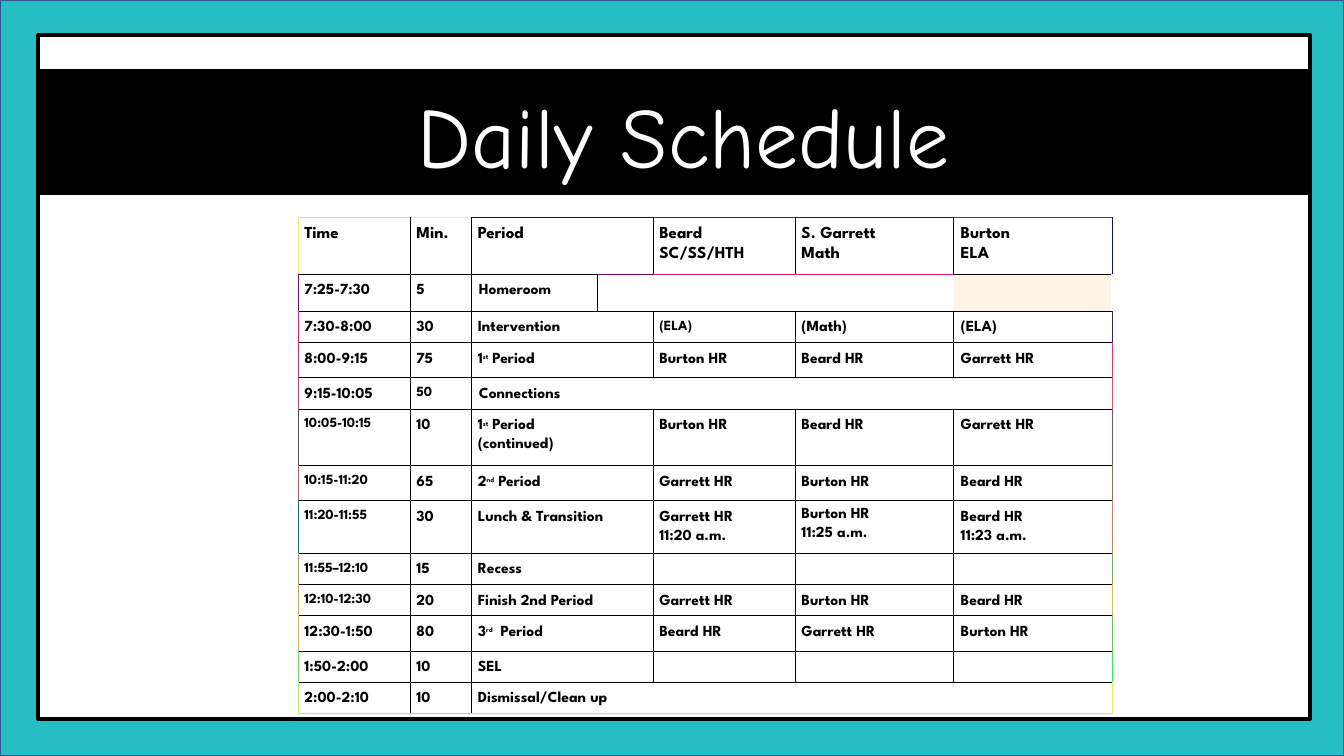
from lxml.etree import SubElement
from pptx import Presentation
from pptx.dml.color import RGBColor
from pptx.enum.shapes import MSO_SHAPE
from pptx.enum.text import MSO_ANCHOR, PP_ALIGN
from pptx.oxml.ns import qn
from pptx.util import Inches, Pt

TITLE = "Daily Schedule"
SCHEDULE = [
    ["Time", "Min.", "Period", "Beard SC/SS/HTH", "S. Garrett\nMath", "Burton\nELA"],
    ["7:25-7:30", "5", "Homeroom", "", "", "", ""],
    ["7:30-8:00", "30", "Intervention", "(ELA)", "(Math)", "(ELA)"],
    ["8:00-9:15", "75", "1^st^ Period", "Burton HR", "Beard HR", "Garrett HR"],
    ["9:15-10:05", "50", "Connections"],
    ["10:05-10:15", "10", "1^st^ Period\n(continued)", "Burton HR", "Beard HR", "Garrett HR"],
    ["10:15-11:20", "65", "2^nd^ Period", "Garrett HR", "Burton HR", "Beard HR"],
    ["11:20-11:55", "30", "Lunch & Transition", "Garrett HR\n11:20 a.m.",
     "Burton HR\n11:25 a.m.", "Beard HR\n11:23 a.m."],
    ["11:55–12:10", "15", "Recess", "", "", ""],
    ["12:10-12:30", "20", "Finish 2nd Period", "Garrett HR", "Burton HR", "Beard HR"],
    ["12:30-1:50", "80", "3^rd^  Period", "Beard HR", "Garrett HR", "Burton HR"],
    ["1:50-2:00", "10", "SEL", "", "", ""],
    ["2:00-2:10", "10", "Dismissal/Clean up"],
]
PERIOD_SPAN = {7: 1, 6: 2, 3: 5}
COLUMN_WIDTHS = [1.11, 0.61, 1.25, 0.55, 1.41, 1.57, 1.57]
ROW_HEIGHTS = [0.56, 0.37, 0.31, 0.35, 0.31, 0.56, 0.35, 0.52, 0.31, 0.31, 0.35, 0.31, 0.31]
LINE_SPACING = {12: 14.2, 11: 13.5, 10: 12}
SMALL_CELLS = {(2, 4), (4, 1), (5, 0), (6, 0), (7, 0), (8, 0), (9, 0)}
TIGHT_CELL = (7, 5)
INDENTED_CELLS = {(1, 2), (4, 2)}
HOMEROOM_ROW = 1

BLACK, WHITE, TEAL, CREAM = "000000", "FFFFFF", "25BEC5", "FFF4E6"
LEFT_EDGE = ["F0FA63", "700D64", "F01C64", "D03264", "B04664", "505464", "B06264",
             "107B64", "B09064", "B0B164", "D0B864", "70D064", "B0EF64"]
RIGHT_EDGE = ["101264", WHITE, "302364", "F03264", "F04F64", "705A64", "906E64",
              "D07D64", "70AC64", "D0B964", "70C164", "30E864", "F0EB64"]
TOP_EDGE = ["B0FA63", "F0FC63", "100A64", "100A64", "700A64", "300C64", "B00A64"]
BOTTOM_EDGE = ["B0F164", "90EE64"] + ["B0ED64"] * 5
HEADER_BASE = [BLACK, BLACK, BLACK, "700C64", "D01C64", "F01C64", BLACK]
PANELS = [
    (0, 0, 13.33, 7.5, TEAL, "31538F", 1),
    (0.38, 0.35, 12.61, 6.78, WHITE, BLACK, 3),
    (0.38, 0.69, 12.61, 1.24, BLACK, BLACK, 1),
]


def color(value):
    return RGBColor.from_string(value)


def assign(target, values):
    for name, value in values.items():
        setattr(target, name, value)


def add_span(para, text, size, font, ink, bold):
    span = para.add_run()
    span.text = text
    assign(span.font, {"size": Pt(size), "name": font, "bold": bold})
    span.font.color.rgb = color(ink)
    return span


def write_cell(cell, text, size, spacings):
    for index, line in enumerate(text.split("\n")):
        frame = cell.text_frame
        para = frame.paragraphs[0] if index == 0 else frame.add_paragraph()
        para.line_spacing = Pt(spacings[min(index, len(spacings) - 1)])
        if not line:
            SubElement(para._p, qn("a:endParaRPr"), sz=str(size * 100))
            continue
        for part, piece in enumerate(line.split("^")):
            raised = part % 2 == 1
            span = add_span(para, piece, 8.5 if raised else size, "League Spartan", BLACK, True)
            if raised:
                span.font._element.set("baseline", "30000")


def draw_borders(cell, borders):
    properties = cell._tc.get_or_add_tcPr()
    for side, ink in borders.items():
        width = Pt(1) if ink == WHITE else Pt(0.75)
        line = SubElement(properties, qn(f"a:ln{side}"), w=str(width))
        if ink:
            fill = SubElement(line, qn("a:solidFill"))
            SubElement(fill, qn("a:srgbClr"), val=ink)
        else:
            SubElement(line, qn("a:noFill"))


def find_borders(row, column, last_column):
    open_cell = row == HOMEROOM_ROW and column > 2
    left = None if open_cell and column > 3 else BLACK
    right = None if open_cell else BLACK
    top = TOP_EDGE[column] if row == 0 else HEADER_BASE[column] if row == 1 else BLACK
    bottom = HEADER_BASE[column] if row == 0 else BLACK
    return {
        "L": LEFT_EDGE[row] if column == 0 else left,
        "R": RIGHT_EDGE[row] if last_column == 6 else right,
        "T": top,
        "B": BOTTOM_EDGE[column] if row == len(SCHEDULE) - 1 else bottom,
    }


def add_schedule(page):
    table = page.shapes.add_table(
        len(SCHEDULE), len(COLUMN_WIDTHS), Inches(2.96), Inches(2.16),
        Inches(sum(COLUMN_WIDTHS)), Inches(sum(ROW_HEIGHTS))).table
    assign(table, {"first_row": False, "horz_banding": False})
    for column, width in zip(table.columns, COLUMN_WIDTHS):
        column.width = Inches(width)
    for row, height in zip(table.rows, ROW_HEIGHTS):
        row.height = Inches(height)
    for row, entries in enumerate(SCHEDULE):
        period_span = PERIOD_SPAN[len(entries)]
        texts = entries[:3] + [""] * (period_span - 1) + entries[3:]
        if period_span > 1:
            table.cell(row, 2).merge(table.cell(row, 1 + period_span))
        for column, text in enumerate(texts):
            cell = table.cell(row, column)
            place = (row, column)
            size = 12 if row == 0 else 10 if place in SMALL_CELLS else 11
            spacing = LINE_SPACING[size]
            write_cell(cell, text, size, [11.2, spacing] if place == TIGHT_CELL else [spacing])
            side = Inches(0.07 if column == 6 or place in INDENTED_CELLS else 0.06)
            assign(cell, {"margin_left": side, "margin_right": side,
                          "margin_top": Inches(0.05), "margin_bottom": Inches(0.05)})
            last_column = 1 + period_span if column == 2 else column
            draw_borders(cell, find_borders(row, column, last_column))
            if place == (HOMEROOM_ROW, 6):
                cell.fill.solid()
                cell.fill.fore_color.rgb = color(CREAM)
            else:
                cell.fill.background()


def add_panel(page, left, top, width, height, fill, ink, weight):
    panel = page.shapes.add_shape(
        MSO_SHAPE.RECTANGLE, Inches(left), Inches(top), Inches(width), Inches(height))
    panel.shadow.inherit = False
    panel.fill.solid()
    panel.fill.fore_color.rgb = color(fill)
    panel.line.color.rgb = color(ink)
    panel.line.width = Pt(weight)


def add_title(page):
    box = page.shapes.add_textbox(Inches(3.46), Inches(0.52), Inches(6.64), Inches(1.36))
    assign(box.text_frame, {"word_wrap": True, "vertical_anchor": MSO_ANCHOR.BOTTOM})
    para = box.text_frame.paragraphs[0]
    assign(para, {"alignment": PP_ALIGN.CENTER, "line_spacing": 0.8})
    add_span(para, TITLE, 61.2, "Comic Neue", WHITE, False)


def main():
    deck = Presentation()
    assign(deck, {"slide_width": Inches(13.33), "slide_height": Inches(7.5)})
    page = deck.slides.add_slide(deck.slide_layouts[6])
    for panel in PANELS:
        add_panel(page, *panel)
    add_title(page)
    add_schedule(page)
    deck.save("out.pptx")


if __name__ == "__main__":
    main()
